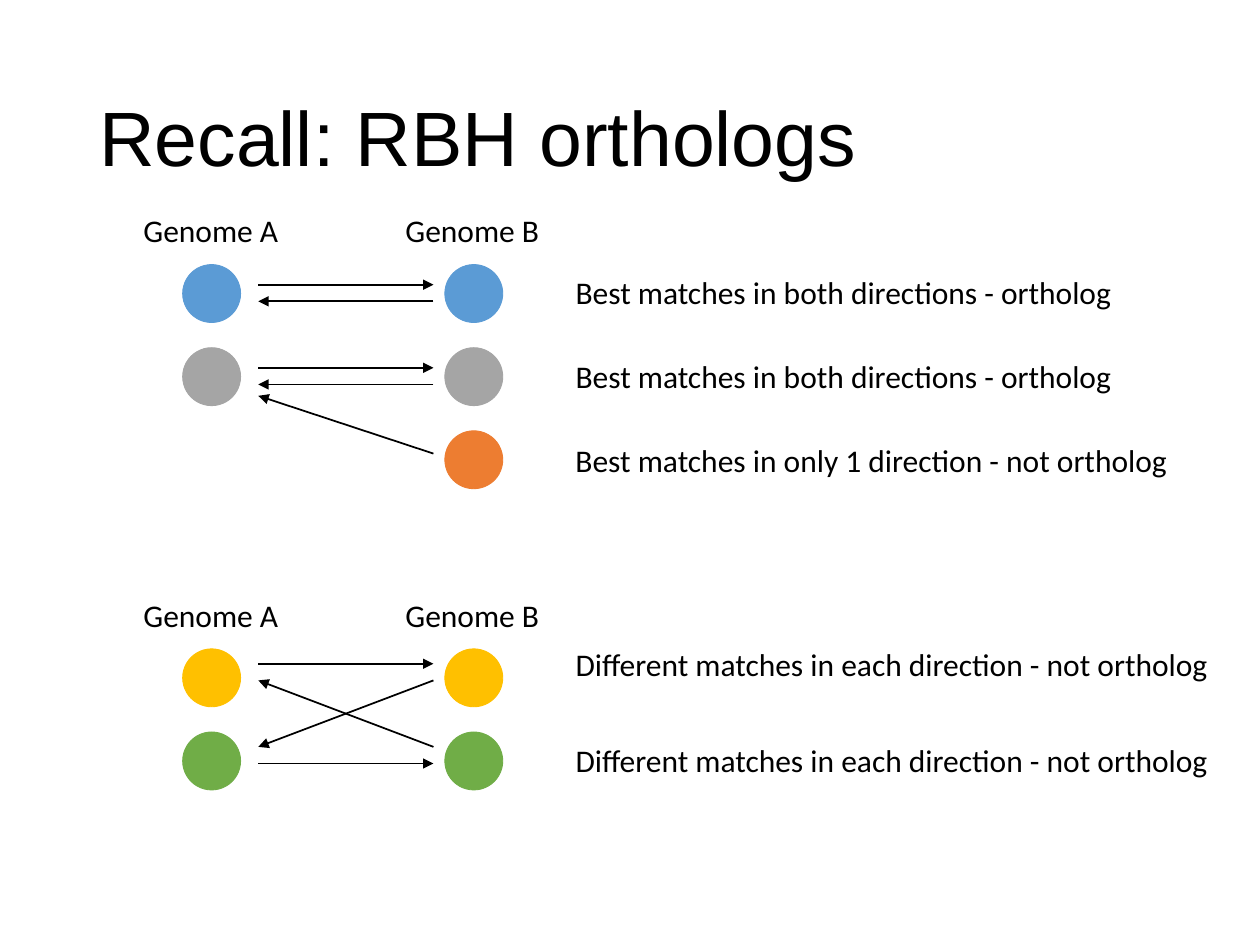
from lxml import etree
from pptx import Presentation
from pptx.dml.color import RGBColor
from pptx.enum import shapes, text
from pptx.oxml import ns
from pptx.util import Pt

COLORS = {"black": "000000", "blue": "5B9BD5", "gray": "A5A5A5",
          "orange": "ED7D31", "yellow": "FFC000", "green": "70AD47"}

TITLE = "Recall: RBH orthologs"
BOTH = "Best matches in both directions - ortholog"
ONE = "Best matches in only 1 direction - not ortholog"
DIFFERENT = "Different matches in each direction - not ortholog"

# Vertical positions inside a group are measured from its first gene.
# genes: color, genomes that have it; notes: wording, top, width
# matches: query genome, query y, hit y
GROUPS = [
    {"top": 151.2,
     "genes": [("blue", "AB"), ("gray", "AB"), ("orange", "B")],
     "matches": [("A", 11.5, 11.5), ("B", 21, 21),
                 ("A", 59, 59), ("B", 68.5, 68.5), ("B", 108, 75)],
     "notes": [(BOTH, 1.4, 325), (BOTH, 49, 325), (ONE, 97, 357)]},
    {"top": 370.8,
     "genes": [("yellow", "AB"), ("green", "AB")],
     "matches": [("A", 8.5, 8.5), ("B", 18, 56),
                 ("A", 65.5, 65.5), ("B", 56, 18)],
     "notes": [(DIFFERENT, -5.8, 394), (DIFFERENT, 49, 394)]},
]

GENE_LEFT = {"A": 104.4, "B": 254.2}
LABEL_LEFT = {"A": 74.9, "B": 224.6}
MATCH_X = {"A": 147.6, "B": 247.7}
GENE_SIZE, GENE_PITCH = 33.1, 47.5
LABEL_OFFSET, LABEL_WIDTH = -34, 93
NOTE_LEFT, TEXT_HEIGHT = 321.8, 29


def color(name):
    return RGBColor.from_string(COLORS[name])


def style_text(frame, font_name, size):
    for run in frame.paragraphs[0].runs:
        run.font.name = font_name
        run.font.size = Pt(size)
        run.font.color.rgb = color("black")


def add_text(slide, wording, left, top, width):
    box = slide.shapes.add_textbox(Pt(left), Pt(top), Pt(width), Pt(TEXT_HEIGHT))
    frame = box.text_frame
    frame.text = wording
    frame.word_wrap = False
    frame.auto_size = text.MSO_AUTO_SIZE.SHAPE_TO_FIT_TEXT
    style_text(frame, "Calibri", 18)


def add_gene(slide, genome, top, color_name):
    gene = slide.shapes.add_shape(shapes.MSO_SHAPE.OVAL, Pt(GENE_LEFT[genome]),
                                  Pt(top), Pt(GENE_SIZE), Pt(GENE_SIZE))
    gene.shadow.inherit = False
    gene.fill.solid()
    gene.fill.fore_color.rgb = color(color_name)
    gene.line.color.rgb = color(color_name)
    gene.line.width = Pt(0.5)


def add_match(slide, query, query_y, hit_y):
    """Draw an arrow from the query genome to its best hit in the other one."""
    hit = "B" if query == "A" else "A"
    arrow = slide.shapes.add_connector(
        shapes.MSO_CONNECTOR.STRAIGHT, Pt(MATCH_X[query]), Pt(query_y),
        Pt(MATCH_X[hit]), Pt(hit_y))
    arrow.line.color.rgb = color("black")
    arrow.line.width = Pt(1)
    etree.SubElement(arrow.line._get_or_add_ln(), ns.qn("a:tailEnd"), type="triangle")
    etree.SubElement(arrow._element.spPr, ns.qn("a:effectLst"))


def add_title(slide):
    title = slide.shapes.title
    title.left, title.top, title.width, title.height = map(Pt, (49.5, 28.8, 621, 104.4))
    frame = title.text_frame
    frame.text = TITLE
    frame.vertical_anchor = text.MSO_ANCHOR.MIDDLE
    frame.paragraphs[0].alignment = text.PP_ALIGN.LEFT
    frame.paragraphs[0].line_spacing = 0.9
    style_text(frame, "Arial", 44)


def add_group(slide, group):
    top = group["top"]
    for genome, left in LABEL_LEFT.items():
        add_text(slide, f"Genome {genome}", left, top + LABEL_OFFSET, LABEL_WIDTH)
    for row, (color_name, genomes) in enumerate(group["genes"]):
        for genome in genomes:
            add_gene(slide, genome, top + row * GENE_PITCH, color_name)
    for query, query_y, hit_y in group["matches"]:
        add_match(slide, query, top + query_y, top + hit_y)
    for wording, offset, width in group["notes"]:
        add_text(slide, wording, NOTE_LEFT, top + offset, width)


def main():
    deck = Presentation()
    deck.slide_width, deck.slide_height = Pt(720), Pt(540)
    slide = deck.slides.add_slide(deck.slide_layouts.get_by_name("Title Only"))
    add_title(slide)
    for group in GROUPS:
        add_group(slide, group)
    deck.save("out.pptx")


if __name__ == "__main__":
    main()
